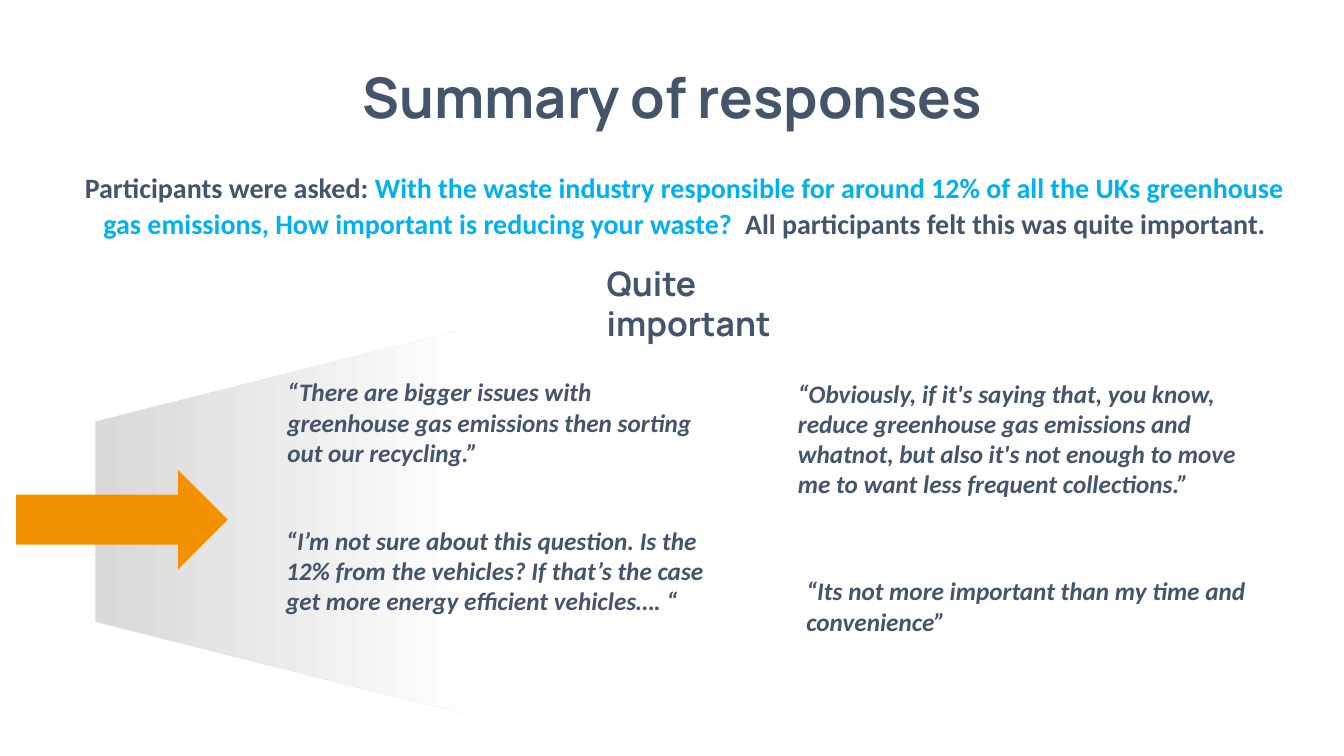
from pptx import Presentation, util as u
from pptx.dml.color import RGBColor
from pptx.enum import shapes, text

SLATE, SKY, ORANGE = "44546A", "00B0F0", "F39200"
FADE = ("D9D9D9", "FFFFFF")

# Boxes are left, top, width, height in centimetres
HEADING = ("Summary of responses", (8.2, 1.45, 17.48, 1.96))
QUESTION = [
    ("Participants were asked: ", SLATE),
    ("With the waste industry responsible for around 12% of all the UKs greenhouse "
     "gas emissions, How important is reducing your waste?  ", SKY),
    ("All participants felt this was quite important.", SLATE),
]
QUESTION_BOX = (1.73, 4.11, 31.04, 2.06)
RATING = ("Quite important", (15.04, 6.5, 6.48, 2.31))
QUOTES = [
    ("“There are bigger issues with greenhouse gas emissions then sorting out our recycling.”",
     (6.99, 9.37, 11.33, 2.57)),
    ("“Obviously, if it's saying that, you know, reduce greenhouse gas emissions and whatnot, "
     "but also it's not enough to move me to want less frequent collections.”",
     (19.86, 9.4, 12.01, 3.33)),
    ("“I’m not sure about this question. Is the 12% from the vehicles? If that’s the case "
     "get more energy efficient vehicles…. “",
     (6.96, 13.11, 11.33, 2.57)),
    ("“Its not more important than my time and convenience”",
     (20.07, 14.38, 11.81, 1.8)),
]
FUNNEL_BOX = (2.29, 8.33, 9.86, 9.63)
ARROW_BOX = (0.41, 11.84, 5.33, 2.51)


def colour(code):
    return RGBColor.from_string(code)


def place(box):
    return [u.Cm(length) for length in box]


def write(frame, runs, size, font="Calibri", italic=False):
    """Fill the frame's first paragraph with bold (wording, colour) runs."""
    frame.word_wrap = True
    frame.auto_size = text.MSO_AUTO_SIZE.SHAPE_TO_FIT_TEXT
    paragraph = frame.paragraphs[0]
    for wording, code in runs:
        run = paragraph.add_run()
        run.text = wording
        run.font.name, run.font.size = font, u.Pt(size)
        run.font.bold, run.font.italic = True, italic
        run.font.color.rgb = colour(code)
    return paragraph


def add_text(slide, box, runs, size, **style):
    return write(slide.shapes.add_textbox(*place(box)).text_frame, runs, size, **style)


def add_plain_shape(slide, kind, box):
    shape = slide.shapes.add_shape(kind, *place(box))
    shape.shadow.inherit = False
    shape.line.fill.background()
    return shape


def main():
    deck = Presentation()
    deck.slide_width, deck.slide_height = u.Cm(33.87), u.Cm(19.05)
    slide = deck.slides.add_slide(deck.slide_layouts[5])

    wording, box = HEADING
    title = slide.shapes.title
    title.left, title.top, title.width, title.height = place(box)
    heading = write(title.text_frame, [(wording, SLATE)], 40, font="Manrope")
    heading.alignment = text.PP_ALIGN.CENTER
    title.text_frame.word_wrap = False
    title.text_frame.vertical_anchor = text.MSO_ANCHOR.TOP

    question = add_text(slide, QUESTION_BOX, QUESTION, 20)
    question.alignment = text.PP_ALIGN.CENTER
    question.line_spacing = 1.07
    question.space_after = u.Pt(8)

    funnel = add_plain_shape(slide, shapes.MSO_SHAPE.TRAPEZOID, FUNNEL_BOX)
    funnel.rotation = 270
    funnel.fill.gradient()
    funnel.fill.gradient_angle = 270
    for stop, code in zip(funnel.fill.gradient_stops, FADE):
        stop.color.rgb = colour(code)

    wording, box = RATING
    add_text(slide, box, [(wording, SLATE)], 24, font="Manrope")

    arrow = add_plain_shape(slide, shapes.MSO_SHAPE.RIGHT_ARROW, ARROW_BOX)
    arrow.fill.solid()
    arrow.fill.fore_color.rgb = colour(ORANGE)

    for wording, box in QUOTES:
        add_text(slide, box, [(wording, SLATE)], 18, italic=True)

    deck.save("out.pptx")


if __name__ == "__main__":
    main()
